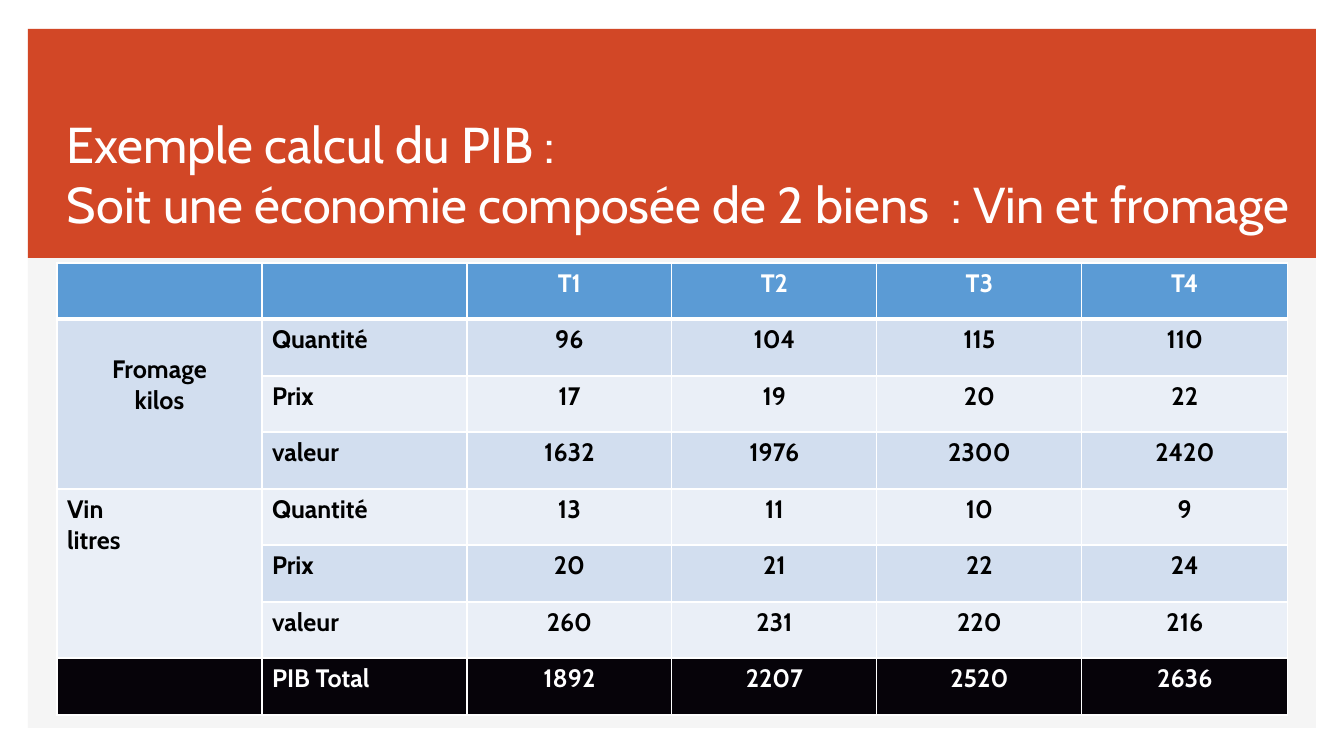
import pptx
import pptx.util
import pptx.dml.color
import pptx.enum.shapes
import pptx.enum.text
import pptx.oxml.ns
from lxml import etree

COLORS = {
    "white": "FFFFFF", "black": "000000", "panel": "F5F5F5", "banner": "D24726",
    "header": "5B9BD5", "odd": "D2DEEF", "even": "EAEFF7", "total": "060309",
}
ALIGN = pptx.enum.text.PP_ALIGN
ANCHOR = pptx.enum.text.MSO_ANCHOR

ROWS = [
    ["", "", "T1", "T2", "T3", "T4"],
    ["Fromage\nkilos", "Quantité", "96", "104", "115", "110"],
    ["", "Prix", "17", "19", "20", "22"],
    ["", "valeur", "1632", "1976", "2300", "2420"],
    ["Vin\nlitres", "Quantité", "13", "11", "10", "9"],
    ["", "Prix", "20", "21", "22", "24"],
    ["", "valeur", "260", "231", "220", "216"],
    ["", "PIB Total", "1892", "2207", "2520", "2636"],
]
LAST = len(ROWS) - 1


def px(n):
    return pptx.util.Emu(round(n * 914400 / 100.8))


def rgb(name):
    return pptx.dml.color.RGBColor.from_string(COLORS[name])


def split(total, count):
    """Whole-pixel lengths that add up to total."""
    return [total * (i + 1) // count - total * i // count for i in range(count)]


def write(tf, text, font="Cabin", size=18, color="black", bold=False, align=ALIGN.LEFT):
    tf.text = text
    for p in tf.paragraphs:
        p.alignment = align
        for r in p.runs:
            r.font.name = font
            r.font.size = pptx.util.Pt(size)
            r.font.bold = bold
            r.font.color.rgb = rgb(color)


class Deck:
    def __init__(self, width, height):
        self.prs = pptx.Presentation()
        self.prs.slide_width, self.prs.slide_height = px(width), px(height)
        self.s = self.prs.slides.add_slide(self.prs.slide_layouts[6])

    def rect(self, box, color):
        kind = pptx.enum.shapes.MSO_SHAPE.RECTANGLE
        sp = self.s.shapes.add_shape(kind, *map(px, box))
        sp.shadow.inherit = False
        sp.fill.solid()
        sp.fill.fore_color.rgb = rgb(color)
        sp.line.fill.background()

    def text(self, box, text, **fmt):
        tf = self.s.shapes.add_textbox(*map(px, box)).text_frame
        tf.word_wrap = True
        tf.vertical_anchor = ANCHOR.BOTTOM
        write(tf, text, **fmt)

    def borders(self, cell, **points):
        tcPr = cell._tc.get_or_add_tcPr()
        for side in "LRTB":
            width = pptx.util.Pt(points.get(side, 1))
            ln = etree.SubElement(tcPr, pptx.oxml.ns.qn("a:ln" + side), w=str(width))
            fill = etree.SubElement(ln, pptx.oxml.ns.qn("a:solidFill"))
            etree.SubElement(fill, pptx.oxml.ns.qn("a:srgbClr"), val=COLORS["white"])

    def table(self, box, rows):
        shape = self.s.shapes.add_table(len(rows), len(rows[0]), *map(px, box))
        table = shape.table
        table.first_row = table.horz_banding = False
        for column, width in zip(table.columns, split(box[2], len(rows[0]))):
            column.width = px(width)
        for row, height in zip(table.rows, split(box[3], len(rows))):
            row.height = px(height)
        for i, row in enumerate(rows):
            band = {0: "header", LAST: "total"}.get(i, "odd" if i % 2 else "even")
            color = "white" if i in (0, LAST) else "black"
            for j, value in enumerate(row):
                cell = table.cell(i, j)
                self.borders(cell, T=3 if i == 1 else 1, B=3 if i == 0 else 1)
                cell.fill.solid()
                cell.fill.fore_color.rgb = rgb(band)
                align = ALIGN.CENTER if j > 1 else ALIGN.LEFT
                write(cell.text_frame, value, color=color, bold=True, align=align)
        return table


def main():
    deck = Deck(1344, 756)

    # Background panel and title banner
    deck.rect((28, 29, 1288, 699), "panel")
    deck.rect((28, 29, 1288, 229), "banner")
    deck.text((57, 56, 1286, 183),
              "Exemple calcul du PIB :\vSoit une économie composée de 2 biens  : Vin et fromage",
              size=36, color="white")

    # GDP table, with each product spanning its three rows
    table = deck.table((57, 263, 1231, 452), ROWS)
    for top in (1, 4):
        table.cell(top, 0).merge(table.cell(top + 2, 0))

    # The cheese label sits centred, one line lower
    cheese = table.cell(1, 0)
    cheese.margin_top = px(35)
    for p in cheese.text_frame.paragraphs:
        p.alignment = ALIGN.CENTER

    deck.prs.save("out.pptx")


if __name__ == "__main__":
    main()
